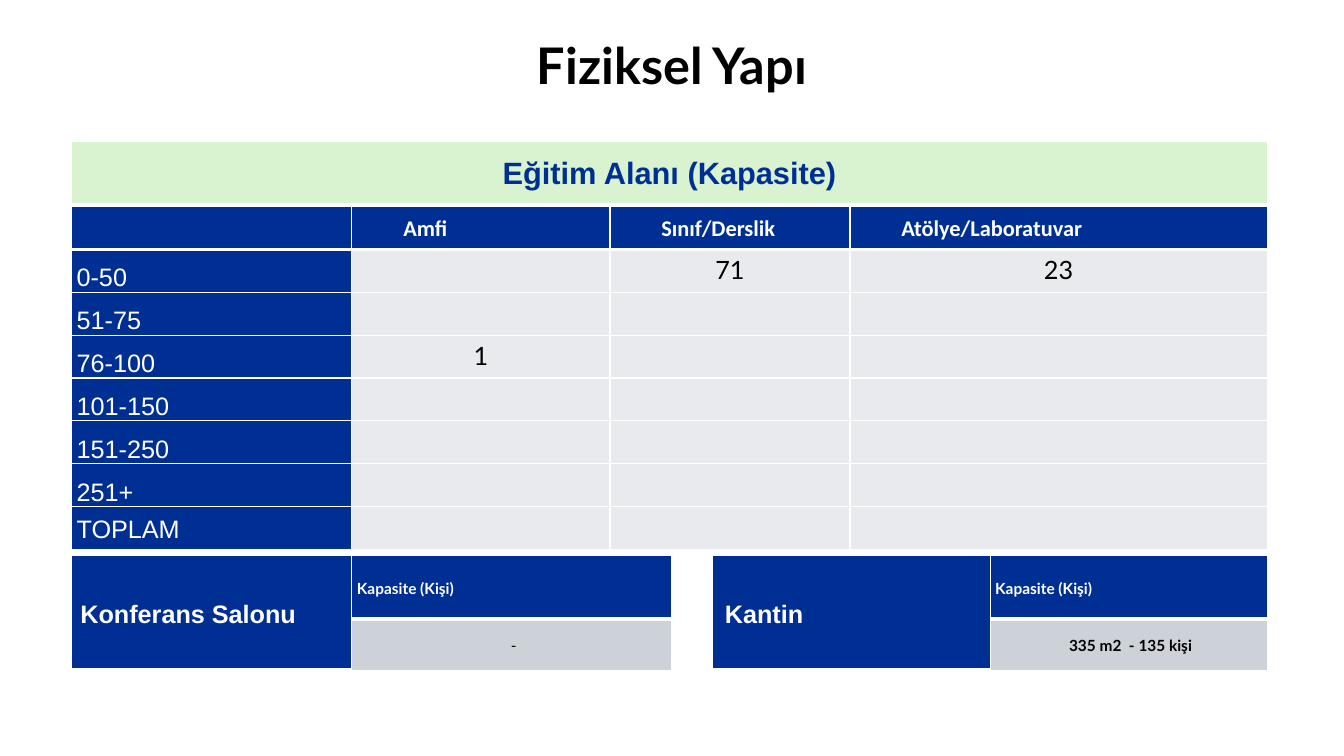
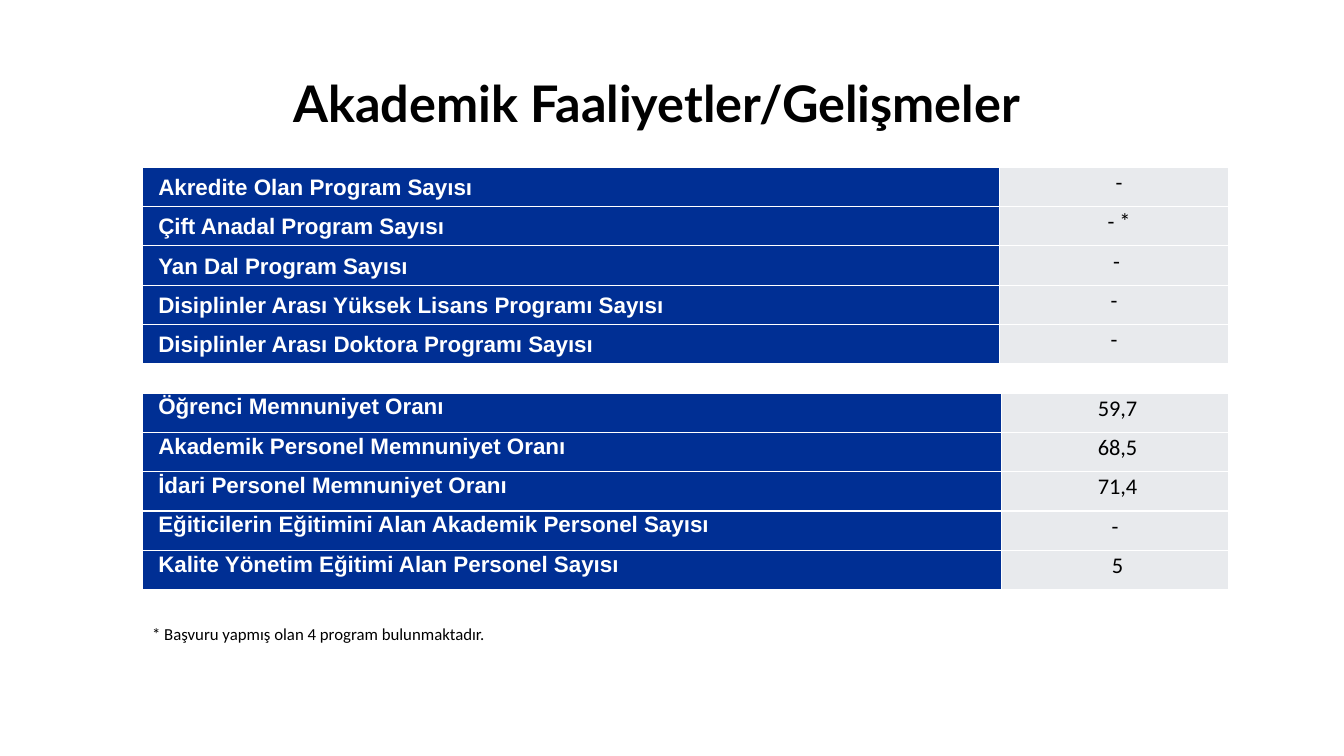
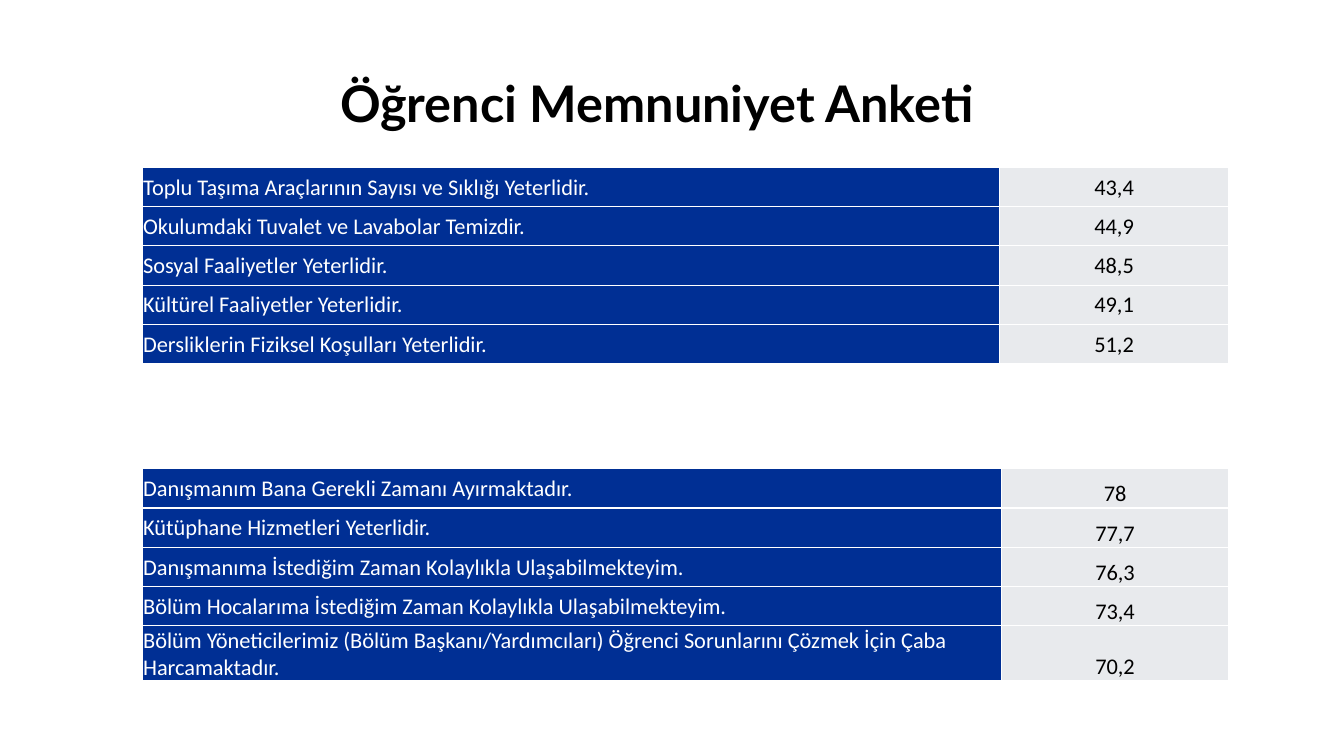
from dataclasses import dataclass, replace

from lxml import etree
from pptx import Presentation
from pptx.dml.color import RGBColor
from pptx.enum.text import MSO_ANCHOR, PP_ALIGN
from pptx.oxml.ns import qn
from pptx.util import Inches, Pt

TOP, MIDDLE, BOTTOM = MSO_ANCHOR.TOP, MSO_ANCHOR.MIDDLE, MSO_ANCHOR.BOTTOM
LEFT, CENTER = PP_ALIGN.LEFT, PP_ALIGN.CENTER

NAVY = RGBColor(0x00, 0x2F, 0x94)
WHITE = RGBColor(0xFF, 0xFF, 0xFF)
BLACK = RGBColor(0x00, 0x00, 0x00)
PALE_GREY = RGBColor(0xE8, 0xEA, 0xED)
MID_GREY = RGBColor(0xCC, 0xD2, 0xD8)
PALE_GREEN = RGBColor(0xD9, 0xF2, 0xD0)

TIGHT = (0.01, 0.01, 0.01, 0)
NARROW = (0.05, 0.01, 0.05, 0)


@dataclass(frozen=True)
class Style:
    """Look of a cell or text box; margins are left, top, right, bottom in inches."""
    font: str
    size: int
    color: RGBColor = BLACK
    bold: bool = False
    fill: RGBColor = PALE_GREY
    anchor: MSO_ANCHOR = MIDDLE
    align: PP_ALIGN = LEFT
    margins: tuple = (0.1, 0.05, 0.1, 0.05)
    line_spacing: float = 1.0
    space_after: int = 0
    bottom_border: int = 1


TITLE = Style("Lato", 36, bold=True, align=CENTER)
NOTE = Style("Calibri", 12, anchor=TOP)

# Slide 1
BANNER = Style("Arial", 22, NAVY, True, PALE_GREEN, align=CENTER,
               line_spacing=1.07, space_after=8, bottom_border=3)
COLUMN_HEAD = Style("Calibri", 16, WHITE, True, NAVY,
                    margins=(0.51, 0.01, 0.01, 0), bottom_border=3)
RANGE = Style("Arial", 18, WHITE, False, NAVY, BOTTOM, margins=NARROW,
              line_spacing=1.07, space_after=8)
TOTAL = replace(RANGE, anchor=MIDDLE)
COUNT = Style("Lato", 18, anchor=TOP, align=CENTER)
ROOM = Style("Arial", 18, WHITE, True, NAVY, margins=NARROW,
             line_spacing=1.07, bottom_border=3)
ROOM_HEAD = replace(ROOM, font="Lato", size=11)
ROOM_VALUE = replace(ROOM_HEAD, color=BLACK, fill=MID_GREY, align=CENTER, bottom_border=1)

# Slides 2 and 3
PROGRAM = Style("Arial", 16, WHITE, True, NAVY, margins=(0.16, 0, 0, 0),
                line_spacing=1.07, space_after=8)
PROGRAM_VALUE = Style("Calibri", 16, anchor=TOP, align=CENTER, margins=(0, 0, 0, 0),
                      line_spacing=1.07, space_after=8)
RATE = replace(PROGRAM, anchor=TOP)
SURVEY = Style("Calibri", 16, WHITE, fill=NAVY, margins=TIGHT)
SURVEY_VALUE = Style("Calibri", 16, align=CENTER, margins=TIGHT)
SURVEY_VALUE_LOW = replace(SURVEY_VALUE, anchor=BOTTOM)

CAPACITY_HEADS = ["", "Amfi", "Sınıf/Derslik", "Atölye/Laboratuvar"]
CAPACITIES = [
    ("0-50", "", "71", "23"),
    ("51-75", "", "", ""),
    ("76-100", "1", "", ""),
    ("101-150", "", "", ""),
    ("151-250", "", "", ""),
    ("251+", "", "", ""),
    ("TOPLAM", "", "", ""),
]
# left, column widths, name runs, value, value style
ROOMS = [
    (7.07, (2.75, 2.75), [(" Kantin", ROOM)], " 335 m2  - 135 kişi", ROOM_VALUE),
    (0.71, (2.78, 3.17), [(" ", ROOM_HEAD), ("Konferans Salonu", ROOM)], " -",
     replace(ROOM_VALUE, bold=False)),
]
PROGRAMS = [
    ("Akredite Olan Program Sayısı", "  -"),
    ("Çift Anadal Program Sayısı", "  - *"),
    ("Yan Dal Program Sayısı", " -"),
    ("Disiplinler Arası Yüksek Lisans Programı Sayısı", " - "),
    ("Disiplinler Arası Doktora Programı Sayısı", " - "),
]
RATES = [
    ("Öğrenci Memnuniyet Oranı", " 59,7"),
    ("Akademik Personel Memnuniyet Oranı", " 68,5"),
    ("İdari Personel Memnuniyet Oranı", " 71,4"),
    ("Eğiticilerin Eğitimini Alan Akademik Personel Sayısı", " - "),
    ("Kalite Yönetim Eğitimi Alan Personel Sayısı", " 5"),
]
LOWEST_SCORES = [
    ("Toplu Taşıma Araçlarının Sayısı ve Sıklığı Yeterlidir.", "43,4"),
    ("Okulumdaki Tuvalet ve Lavabolar Temizdir.", "44,9"),
    ("Sosyal Faaliyetler Yeterlidir.", "48,5"),
    ("Kültürel Faaliyetler Yeterlidir.", "49,1"),
    ("Dersliklerin Fiziksel Koşulları Yeterlidir.", "51,2"),
]
HIGHEST_SCORES = [
    ("Danışmanım Bana Gerekli Zamanı Ayırmaktadır.", "78"),
    ("Kütüphane Hizmetleri Yeterlidir.", "77,7"),
    ("Danışmanıma İstediğim Zaman Kolaylıkla Ulaşabilmekteyim.", "76,3"),
    ("Bölüm Hocalarıma İstediğim Zaman Kolaylıkla Ulaşabilmekteyim.", "73,4"),
    ("Bölüm Yöneticilerimiz (Bölüm Başkanı/Yardımcıları) Öğrenci Sorunlarını "
     "Çözmek İçin Çaba Harcamaktadır.", "70,2"),
]
ROW_HEIGHT = 0.39
UPPER_WIDTHS, LOWER_WIDTHS = (8.5, 2.28), (8.52, 2.26)


def write_text(text_frame, content, style):
    """Fill the first paragraph with a string or with a list of (text, style) runs."""
    paragraph = text_frame.paragraphs[0]
    paragraph.alignment = style.align
    paragraph.line_spacing = style.line_spacing
    paragraph.space_after = Pt(style.space_after)
    runs = [(content, style)] if isinstance(content, str) else content
    for text, run_style in runs:
        if not text:
            continue
        run = paragraph.add_run()
        run.text = text
        run.font.name = run_style.font
        run.font.size = Pt(run_style.size)
        run.font.bold = run_style.bold
        run.font.color.rgb = run_style.color


def add_text(slide, box, text, style):
    shape = slide.shapes.add_textbox(*(Inches(length) for length in box))
    shape.text_frame.word_wrap = True
    shape.text_frame.vertical_anchor = style.anchor
    write_text(shape.text_frame, text, style)


def set_borders(cell, bottom_width):
    properties = cell._tc.get_or_add_tcPr()
    widths = {"a:lnL": 1, "a:lnR": 1, "a:lnT": 1, "a:lnB": bottom_width}
    for position, (tag, width) in enumerate(widths.items()):
        line = etree.Element(qn(tag), w=str(Pt(width)))
        fill = etree.SubElement(line, qn("a:solidFill"))
        etree.SubElement(fill, qn("a:srgbClr"), val=str(WHITE))
        properties.insert(position, line)


def add_table(slide, left, top, widths, heights, rows):
    """Add a table from rows of (content, style) cells; None continues the cell above."""
    frame = slide.shapes.add_table(len(heights), len(widths), Inches(left), Inches(top),
                                   Inches(sum(widths)), Inches(sum(heights)))
    table = frame.table
    table.first_row = table.horz_banding = False
    for column, width in zip(table.columns, widths):
        column.width = Inches(width)
    for row, height in zip(table.rows, heights):
        row.height = Inches(height)
    for row_index, row in enumerate(rows):
        for column_index, entry in enumerate(row):
            cell = table.cell(row_index, column_index)
            if entry is None:
                table.cell(row_index - 1, column_index).merge(cell)
                entry = ("", rows[row_index - 1][column_index][1])
            content, style = entry
            cell.fill.solid()
            cell.fill.fore_color.rgb = style.fill
            cell.vertical_anchor = style.anchor
            (cell.margin_left, cell.margin_top, cell.margin_right,
             cell.margin_bottom) = (Inches(margin) for margin in style.margins)
            set_borders(cell, style.bottom_border)
            write_text(cell.text_frame, content, style)


def add_pairs(slide, top, widths, pairs, label_style, value_style, last_height=ROW_HEIGHT):
    """Add a two-column table of labels and values."""
    heights = [ROW_HEIGHT] * (len(pairs) - 1) + [last_height]
    rows = [[(label, label_style), (value, value_style)] for label, value in pairs]
    add_table(slide, 1.41, top, widths, heights, rows)


def add_slide(presentation, title, left=1.31, top=0.65):
    slide = presentation.slides.add_slide(presentation.slide_layouts[6])
    add_text(slide, (left, top, 10.41, 0.74), title, TITLE)
    return slide


def build_structure(presentation):
    slide = add_slide(presentation, "Fiziksel Yapı", 1.46, 0.27)
    rows = [[(head, COLUMN_HEAD) for head in CAPACITY_HEADS]]
    for label, *counts in CAPACITIES:
        label_style = TOTAL if label == "TOPLAM" else RANGE
        rows.append([(label, label_style)] + [(count, COUNT) for count in counts])
    add_table(slide, 0.71, 2.05, (2.78, 2.56, 2.38, 4.14), [3.4 / len(rows)] * len(rows), rows)
    add_table(slide, 0.71, 1.4, (11.86,), (0.63,), [[("Eğitim Alanı (Kapasite)", BANNER)]])
    for left, widths, name, value, value_style in ROOMS:
        add_table(slide, left, 5.51, widths, (0.63, 0.51),
                  [[(name, ROOM), ("Kapasite (Kişi)", ROOM_HEAD)],
                   [None, (value, value_style)]])


def build_academics(presentation):
    slide = add_slide(presentation, "Akademik Faaliyetler/Gelişmeler")
    add_pairs(slide, 1.66, UPPER_WIDTHS, PROGRAMS, PROGRAM, PROGRAM_VALUE)
    add_pairs(slide, 3.9, LOWER_WIDTHS, RATES, RATE, PROGRAM_VALUE)
    add_text(slide, (1.41, 6.14, 6.66, 0.3),
             "* Başvuru yapmış olan 4 program bulunmaktadır.", NOTE)


def build_survey(presentation):
    slide = add_slide(presentation, "Öğrenci Memnuniyet Anketi")
    add_pairs(slide, 1.66, UPPER_WIDTHS, LOWEST_SCORES, SURVEY, SURVEY_VALUE)
    add_pairs(slide, 4.65, LOWER_WIDTHS, HIGHEST_SCORES, SURVEY, SURVEY_VALUE_LOW, 0.53)


def main():
    presentation = Presentation()
    presentation.slide_width = Inches(13.33)
    presentation.slide_height = Inches(7.5)
    for build in (build_structure, build_academics, build_survey):
        build(presentation)
    presentation.save("out.pptx")


if __name__ == "__main__":
    main()
